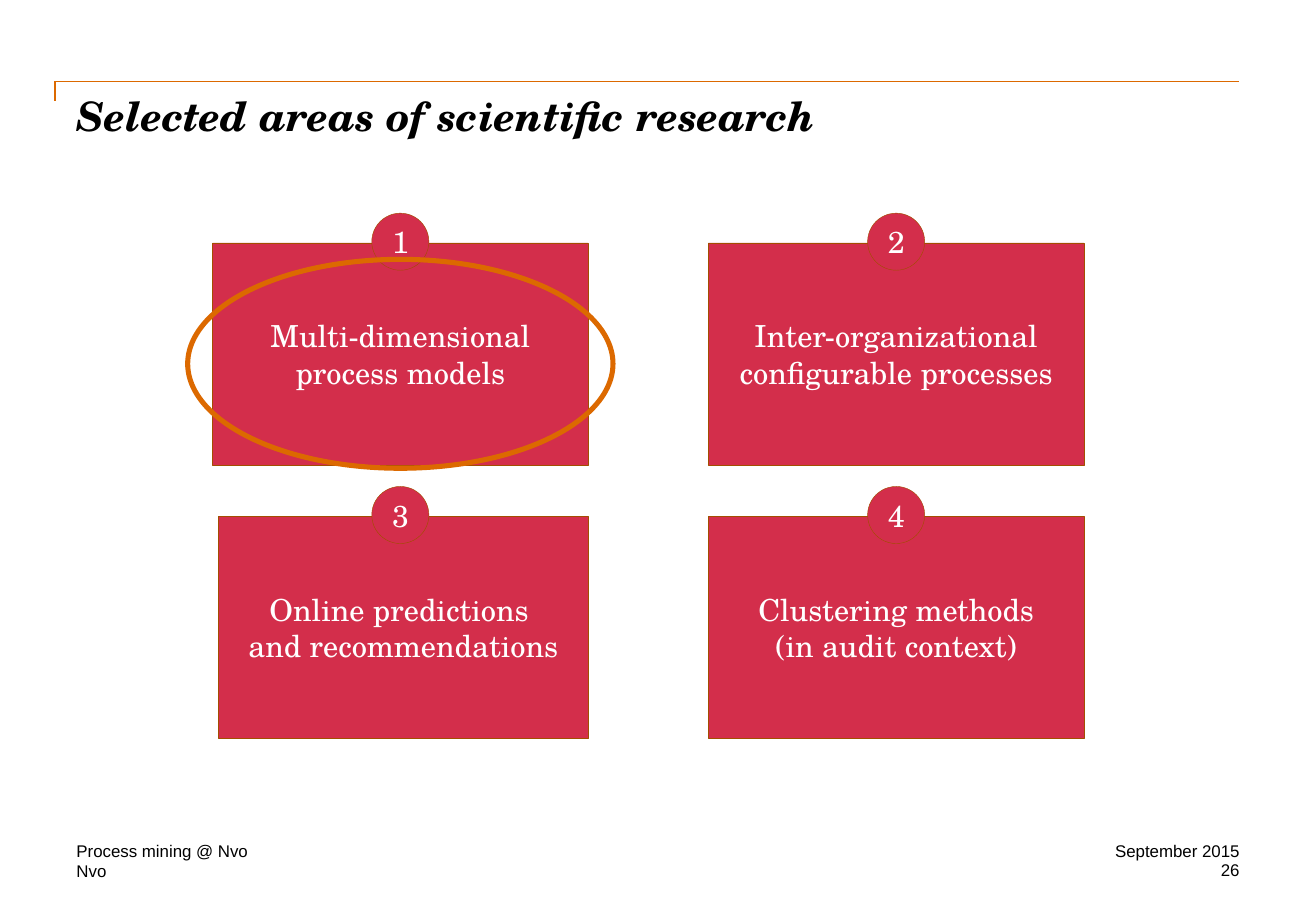
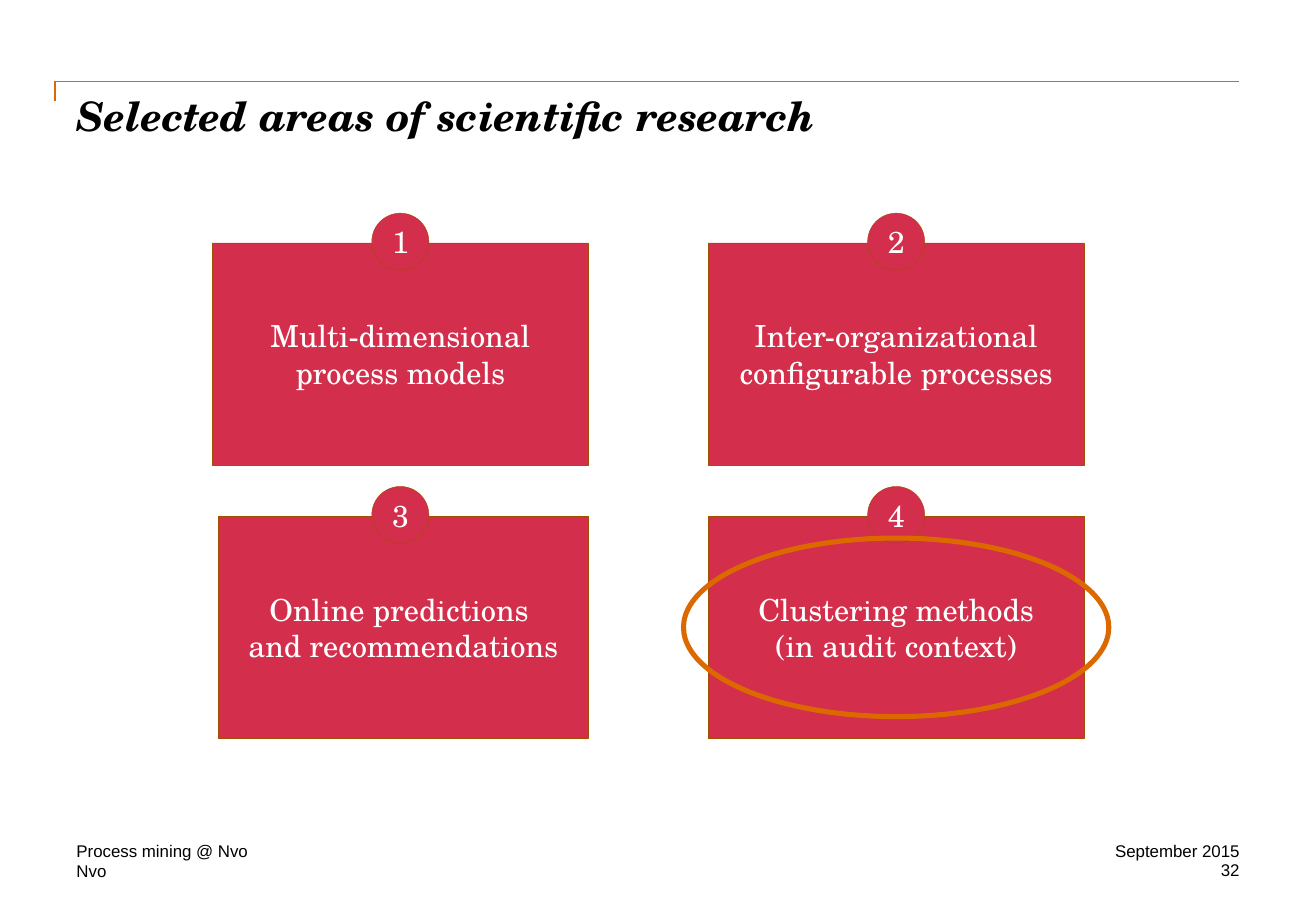
from lxml import etree
from pptx import Presentation
from pptx.dml.color import RGBColor
from pptx.enum.shapes import MSO_CONNECTOR, MSO_SHAPE
from pptx.enum.text import MSO_ANCHOR, PP_ALIGN
from pptx.oxml.ns import qn
from pptx.util import Inches, Pt

STRAIGHT = MSO_CONNECTOR.STRAIGHT
RECTANGLE, OVAL = MSO_SHAPE.RECTANGLE, MSO_SHAPE.OVAL
LEFT, CENTER, RIGHT = PP_ALIGN.LEFT, PP_ALIGN.CENTER, PP_ALIGN.RIGHT
TOP, MIDDLE, BOTTOM = MSO_ANCHOR.TOP, MSO_ANCHOR.MIDDLE, MSO_ANCHOR.BOTTOM

BLACK = RGBColor(0x00, 0x00, 0x00)
WHITE = RGBColor(0xFF, 0xFF, 0xFF)
ROSE = RGBColor(0xD3, 0x2E, 0x4B)
ORANGE = RGBColor(0xDC, 0x69, 0x00)
BROWN = RGBColor(0xA3, 0x4E, 0x00)
SERIF, SANS = "TeX Gyre Schola", "Arial"

TITLE = "Selected areas of scientific research"
FOOTER, COMPANY, DATE = "Process mining @ Nvo", "Nvo", "September 2015"

# Text and left inset of each card, in reading order
CARDS = [
    ("Multi-dimensional process models", 0),
    ("Inter-organizational configurable processes", 0),
    ("Online predictions \vand recommendations", 0.05),
    ("Clustering methods\n(in audit context)", 0),
]
# Page number, highlighted card, ring height, ring offset below the card centre
PAGES = [(26, 0, 1.72, 0.08), (32, 3, 1.47, 0)]

SLIDE_WIDTH, SLIDE_HEIGHT = 10.83, 7.5
MARGIN, RIGHT_EDGE = 0.63, 10.2
COLUMNS, ROWS = (1.75, 5.83), (2, 4.25)
CARD_WIDTH, CARD_HEIGHT = 3.09, 1.83
BADGE = 0.47
RING_WIDTH = 3.5
RULE_LEFT, RULE_TOP, RULE_BOTTOM = 0.45, 0.67, 0.83
FOOTER_TOPS, FOOTER_HEIGHT = (6.92, 7.08), 0.17


def write(shape, text, font, size, color, align, anchor, bold=False):
    frame = shape.text_frame
    frame.word_wrap = True
    frame.vertical_anchor = anchor
    frame.text = text
    for para in frame.paragraphs:
        para.alignment = align
        for span in para.runs:
            span.font.name = font
            span.font.size = Pt(size)
            span.font.color.rgb = color
            span.font.bold = span.font.italic = bold


def add_text(page, place, text, font, size, align=LEFT, anchor=TOP, bold=False):
    box = page.shapes.add_textbox(*map(Inches, place))
    frame = box.text_frame
    frame.margin_left = frame.margin_right = 0
    frame.margin_top = frame.margin_bottom = 0
    write(box, text, font, size, BLACK, align, anchor, bold)


def add_outlined(page, kind, place, line, weight, fill=None):
    shape = page.shapes.add_shape(kind, *map(Inches, place))
    shape.shadow.inherit = False
    shape.line.color.rgb = line
    shape.line.width = Pt(weight)
    if fill is None:
        shape.fill.background()
    else:
        shape.fill.solid()
        shape.fill.fore_color.rgb = fill
    return shape


def add_rule(page, end):
    """Draw one arm of the corner rule, from the corner to the end point."""
    points = (RULE_LEFT, RULE_TOP, *end)
    rule = page.shapes.add_connector(STRAIGHT, *map(Inches, points))
    rule.line.color.rgb = ORANGE
    rule.line.width = Pt(1)
    etree.SubElement(rule.element.spPr, qn("a:effectLst"))


def add_frame(page, number):
    """Draw the corner rule, title and footers."""
    for end in ((RULE_LEFT, RULE_BOTTOM), (RIGHT_EDGE, RULE_TOP)):
        add_rule(page, end)
    add_text(page, (MARGIN, 0.75, RIGHT_EDGE - MARGIN, 1), TITLE, SERIF, 24, bold=True)
    footers = [(FOOTER, DATE), (COMPANY, str(number))]
    for top, (left_text, right_text) in zip(FOOTER_TOPS, footers):
        add_text(page, (MARGIN, top, 6.23, FOOTER_HEIGHT), left_text, SANS, 10,
                 anchor=BOTTOM)
        add_text(page, (8.4, top, RIGHT_EDGE - 8.4, FOOTER_HEIGHT), right_text,
                 SANS, 10, RIGHT)


def card_origin(index):
    row, column = divmod(index, len(COLUMNS))
    return COLUMNS[column], ROWS[row]


def add_cards(page):
    for index, (text, inset) in enumerate(CARDS):
        left, top = card_origin(index)
        badge_left = left + (CARD_WIDTH - BADGE) / 2
        parts = [
            (RECTANGLE, (left + inset, top, CARD_WIDTH - inset, CARD_HEIGHT), text),
            (OVAL, (badge_left, top - BADGE / 2 - 0.01, BADGE, BADGE), str(index + 1)),
        ]
        for kind, place, label in parts:
            shape = add_outlined(page, kind, place, BROWN, 0.25, ROSE)
            write(shape, label, SERIF, 18, WHITE, CENTER, MIDDLE)


def add_ring(page, index, height, drop):
    left, top = card_origin(index)
    place = (left + (CARD_WIDTH - RING_WIDTH) / 2,
             top + (CARD_HEIGHT - height) / 2 + drop, RING_WIDTH, height)
    add_outlined(page, OVAL, place, ORANGE, 3)


def main():
    deck = Presentation()
    deck.slide_width, deck.slide_height = Inches(SLIDE_WIDTH), Inches(SLIDE_HEIGHT)
    for number, card, ring_height, drop in PAGES:
        page = deck.slides.add_slide(deck.slide_layouts[6])
        add_frame(page, number)
        add_cards(page)
        add_ring(page, card, ring_height, drop)
    deck.save("out.pptx")


if __name__ == "__main__":
    main()
